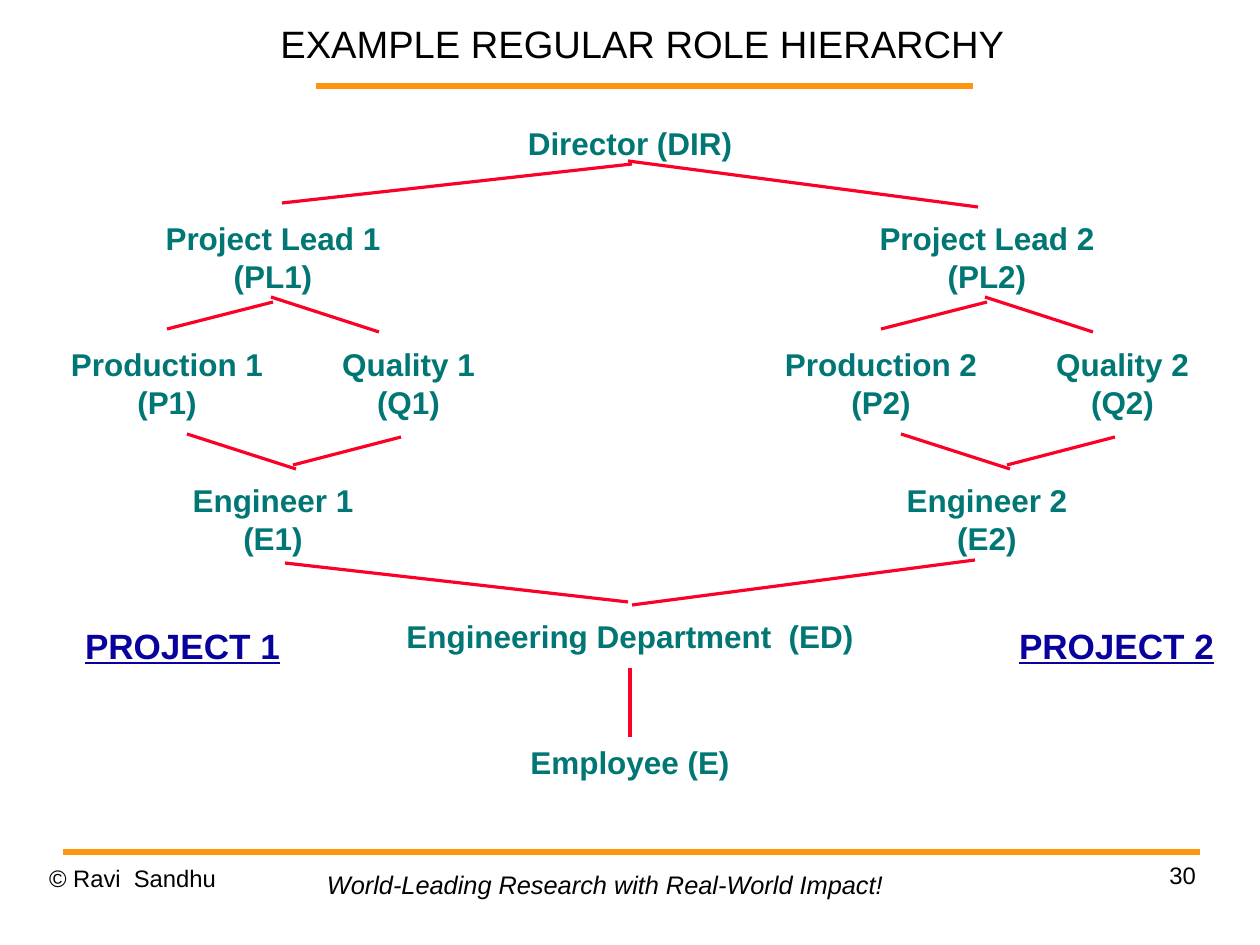
from lxml.etree import SubElement
from pptx import Presentation
from pptx.dml.color import RGBColor
from pptx.enum.shapes import MSO_CONNECTOR
from pptx.enum.text import MSO_ANCHOR, MSO_AUTO_SIZE, PP_ALIGN
from pptx.oxml.ns import qn
from pptx.util import Pt

PX = 8000  # EMU per px
ORANGE, RED, TEAL, NAVY, BLACK = "FF950E", "FC0128", "007774", "08019D", "000000"
PROJECT_SHIFT = 714
TOP, BOTTOM = 0, 2


def color(hex_text):
    return RGBColor.from_string(hex_text)


def add_text(slide, box, text, size, fill=BLACK, align=PP_ALIGN.LEFT, bold=False,
             italic=False, underline=False, insets=(0, 0), fit=False,
             anchor=MSO_ANCHOR.TOP, spacing=None):
    """Add a text box; each line of text becomes a paragraph."""
    shape = slide.shapes.add_textbox(*(value * PX for value in box))
    frame = shape.text_frame
    frame.word_wrap = not fit
    frame.auto_size = MSO_AUTO_SIZE.SHAPE_TO_FIT_TEXT if fit else MSO_AUTO_SIZE.NONE
    frame.vertical_anchor = anchor
    frame.margin_left = frame.margin_right = insets[0] * PX
    frame.margin_top = frame.margin_bottom = insets[1] * PX
    frame.text = text
    for paragraph in frame.paragraphs:
        paragraph.alignment = align
        paragraph.line_spacing = spacing
        for run in paragraph.runs:
            font = run.font
            font.name, font.size = "Arial", Pt(size)
            font.bold, font.italic, font.underline = bold, italic, underline
            font.color.rgb = color(fill)
    return shape


def add_role(slide, left, top, width, text):
    height = 89 if "\n" in text else 50
    return add_text(slide, (left, top, width, height), text, 19.8, TEAL,
                    PP_ALIGN.CENTER, bold=True, insets=(13, 6), fit=True)


def add_line(slide, points, stroke=RED, width=2):
    line = slide.shapes.add_connector(MSO_CONNECTOR.STRAIGHT,
                                      *(value * PX for value in points))
    line.line.color.rgb = color(stroke)
    line.line.width = Pt(width)
    SubElement(line._element.spPr, qn("a:effectLst"))
    return line


def add_project(slide, number, label_left):
    """Add the roles, links and heading of one project."""
    shift = (number - 1) * PROJECT_SHIFT
    lead = add_role(slide, 152 + shift, 213, 242, f"Project Lead {number}\n(PL{number})")
    for left, top, width, name, code in (
        (179, 475, 188, "Engineer", "E"),
        (57, 339, 220, "Production", "P"),
        (329, 339, 159, "Quality", "Q"),
    ):
        add_role(slide, left + shift, top, width, f"{name} {number}\n({code}{number})")

    lead_to_production = add_line(slide, (273 + shift, 302, 167 + shift, 329))
    lead_to_production.begin_connect(lead, BOTTOM)
    for x1, y1, x2, y2 in ((401, 437, 293, 465), (296, 469, 187, 434),
                           (379, 332, 271, 297)):
        add_line(slide, (x1 + shift, y1, x2 + shift, y2))

    add_text(slide, (label_left, 618, 222, 55), f"PROJECT {number}", 22.1, NAVY,
             bold=True, underline=True, insets=(13, 6), fit=True)


def add_frame(slide):
    """Add the title, the two rules and the footer."""
    for points in ((316, 86, 973, 86), (63, 852, 1200, 852)):
        add_line(slide, points, ORANGE, 4.31)
    add_text(slide, (275, 0, 735, 86), "EXAMPLE REGULAR ROLE HIERARCHY", 24,
             align=PP_ALIGN.CENTER, anchor=MSO_ANCHOR.MIDDLE)
    add_text(slide, (49, 863, 294, 65), "© Ravi  Sandhu", 15, spacing=1.01)
    add_text(slide, (316, 863, 592, 42),
             "World-Leading Research with Real-World Impact!", 16,
             italic=True, insets=(11, 6), fit=True)
    add_text(slide, (902, 860, 294, 65), "30", 15, align=PP_ALIGN.RIGHT, spacing=1.01)


def add_shared_roles(slide):
    """Add the roles above and below both projects, with their links."""
    add_role(slide, 514, 118, 232, "Director (DIR)")
    add_role(slide, 391, 611, 478, "Engineering Department  (ED)")
    employee = add_role(slide, 517, 737, 226, "Employee (E)")
    for points in ((632, 164, 282, 203), (978, 207, 628, 161),
                   (285, 563, 628, 602), (632, 605, 975, 560)):
        add_line(slide, points)
    add_line(slide, (630, 668, 630, 737)).end_connect(employee, TOP)


def main():
    presentation = Presentation()
    presentation.slide_width = 1260 * PX
    presentation.slide_height = 945 * PX
    slide = presentation.slides.add_slide(presentation.slide_layouts[6])
    add_frame(slide)
    add_shared_roles(slide)
    add_project(slide, 1, label_left=72)
    add_project(slide, 2, label_left=1006)
    presentation.save("out.pptx")


if __name__ == "__main__":
    main()
